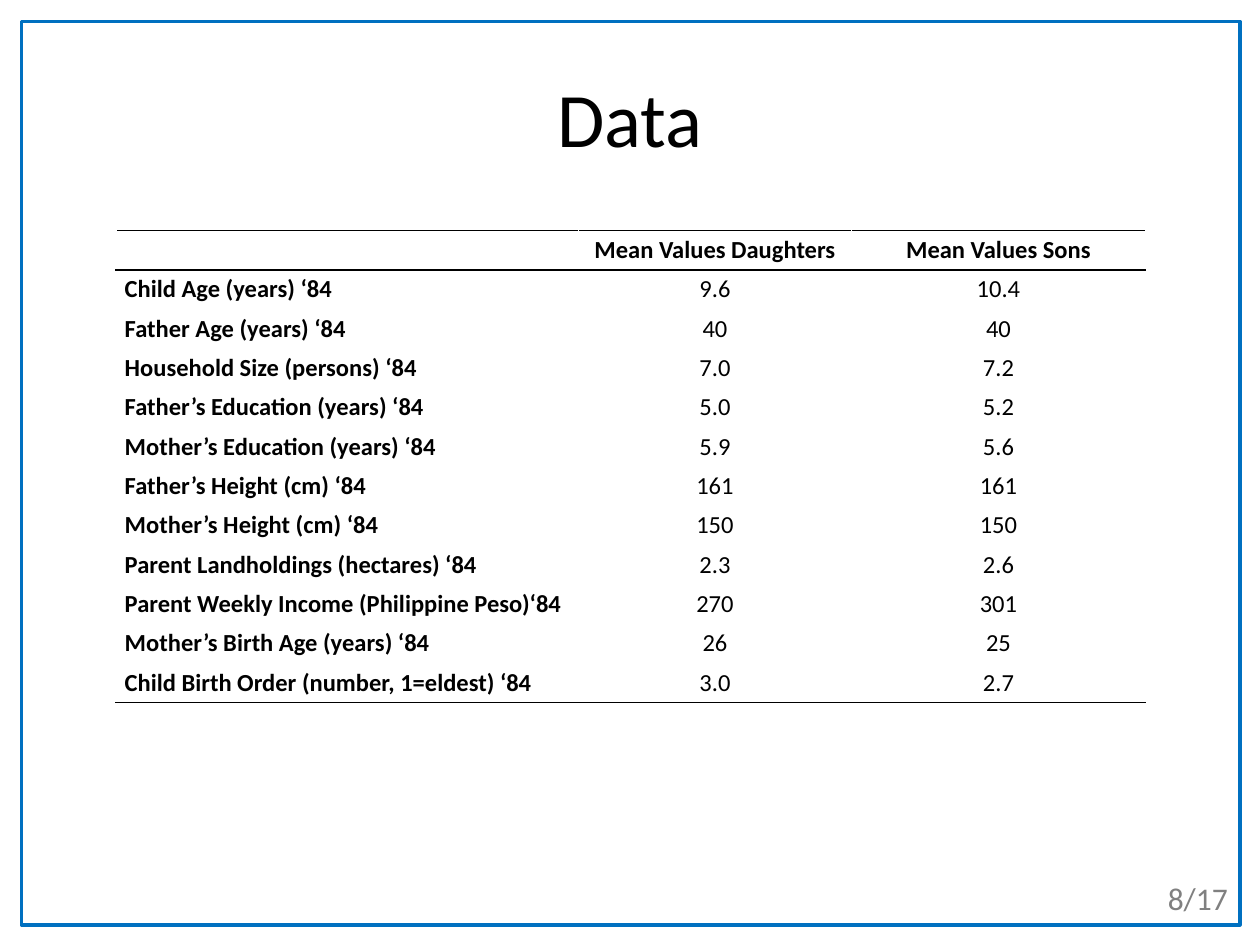
from lxml import etree
from pptx import Presentation
from pptx.dml.color import RGBColor
from pptx.enum import shapes, text
from pptx.oxml import ns
from pptx.util import Inches, Pt

COLORS = {"frame": "0070C0", "text": "000000", "rule": "000000",
          "grid": "FFFFFF", "number": "808080"}
FONT = "Calibri"
HEADER = ("", "Mean Values Daughters", "Mean Values Sons")
ROWS = [
    ("Child Age (years) ‘84", "9.6", "10.4"),
    ("Father Age (years) ‘84", "40", "40"),
    ("Household Size (persons) ‘84", "7.0", "7.2"),
    ("Father’s Education (years) ‘84", "5.0", "5.2"),
    ("Mother’s Education (years) ‘84", "5.9", "5.6"),
    ("Father’s Height (cm) ‘84", "161", "161"),
    ("Mother’s Height (cm) ‘84", "150", "150"),
    ("Parent Landholdings (hectares) ‘84", "2.3", "2.6"),
    ("Parent Weekly Income (Philippine Peso)‘84", "270", "301"),
    ("Mother’s Birth Age (years) ‘84", "26", "25"),
    ("Child Birth Order (number, 1=eldest) ‘84", "3.0", "2.7"),
]


def add_run(paragraph, wording, size, color="text", bold=False):
    run = paragraph.add_run()
    run.text = wording
    run.font.name = FONT
    run.font.size = Pt(size)
    run.font.bold = bold
    run.font.color.rgb = RGBColor.from_string(COLORS[color])


def set_borders(cell, **sides):
    """Draw 1 pt borders; sides maps L, R, T and B to colour names."""
    properties = cell._tc.get_or_add_tcPr()
    for side, color in sides.items():
        line = etree.SubElement(properties, ns.qn(f"a:ln{side}"), w=str(Pt(1)))
        fill = etree.SubElement(line, ns.qn("a:solidFill"))
        etree.SubElement(fill, ns.qn("a:srgbClr"), val=COLORS[color])


def add_frame(slide, left, top, width, height):
    frame = slide.shapes.add_shape(shapes.MSO_SHAPE.RECTANGLE, left, top, width, height)
    frame.shadow.inherit = False
    frame.fill.background()
    frame.line.color.rgb = RGBColor.from_string(COLORS["frame"])
    frame.line.width = Pt(2)


def place_title(slide, left, top, width, height):
    title = slide.shapes.title
    title.left, title.top, title.width, title.height = left, top, width, height
    title.text_frame.vertical_anchor = text.MSO_ANCHOR.MIDDLE
    paragraph = title.text_frame.paragraphs[0]
    paragraph.alignment = text.PP_ALIGN.CENTER
    add_run(paragraph, "Data", 44)


def fill_cell(cell, wording, bold, alignment):
    cell.margin_left = cell.margin_right = Inches(0.07)
    cell.margin_top = cell.margin_bottom = 0
    cell.fill.background()
    if wording:
        paragraph = cell.text_frame.paragraphs[0]
        paragraph.alignment = alignment
        paragraph.line_spacing = 1.15
        paragraph.space_after = Pt(0.6)
        add_run(paragraph, wording, 14, bold=bold)


def add_means_table(slide, left, top, width, height):
    records = [HEADER, *ROWS]
    last = len(records) - 1
    table = slide.shapes.add_table(len(records), len(HEADER), left, top, width, height).table
    table.first_row = table.horz_banding = False
    for column, share in zip(table.columns, (3.67, 2.17, 2.33)):
        column.width = int(width * share / 8.17)
    for row_index, record in enumerate(records):
        table.rows[row_index].height = int(height / len(records))
        for column_index, wording in enumerate(record):
            cell = table.cell(row_index, column_index)
            set_borders(cell, L="grid", R="grid",
                        T="rule" if row_index in (0, 1) else "grid",
                        B="rule" if row_index in (0, last) else "grid")
            is_label = column_index == 0
            fill_cell(cell, wording, row_index == 0 or is_label,
                      text.PP_ALIGN.LEFT if is_label else text.PP_ALIGN.CENTER)


def add_page_number(slide, left, top, width, height):
    frame = slide.shapes.add_textbox(left, top, width, height).text_frame
    frame.word_wrap = True
    frame.auto_size = text.MSO_AUTO_SIZE.SHAPE_TO_FIT_TEXT
    add_run(frame.paragraphs[0], "8/17", 18, "number")


def main():
    presentation = Presentation()
    presentation.slide_width, presentation.slide_height = Inches(10), Inches(7.5)
    slide = presentation.slides.add_slide(presentation.slide_layouts[5])
    add_frame(slide, Inches(0.17), Inches(0.17), Inches(9.67), Inches(7.17))
    place_title(slide, Inches(0.5), Inches(0.3), Inches(9), Inches(1.25))
    add_means_table(slide, Inches(0.92), Inches(1.83), Inches(8.17), Inches(3.75))
    add_page_number(slide, Inches(9.17), Inches(6.93), Inches(0.83), Inches(0.4))
    presentation.save("out.pptx")


if __name__ == "__main__":
    main()
